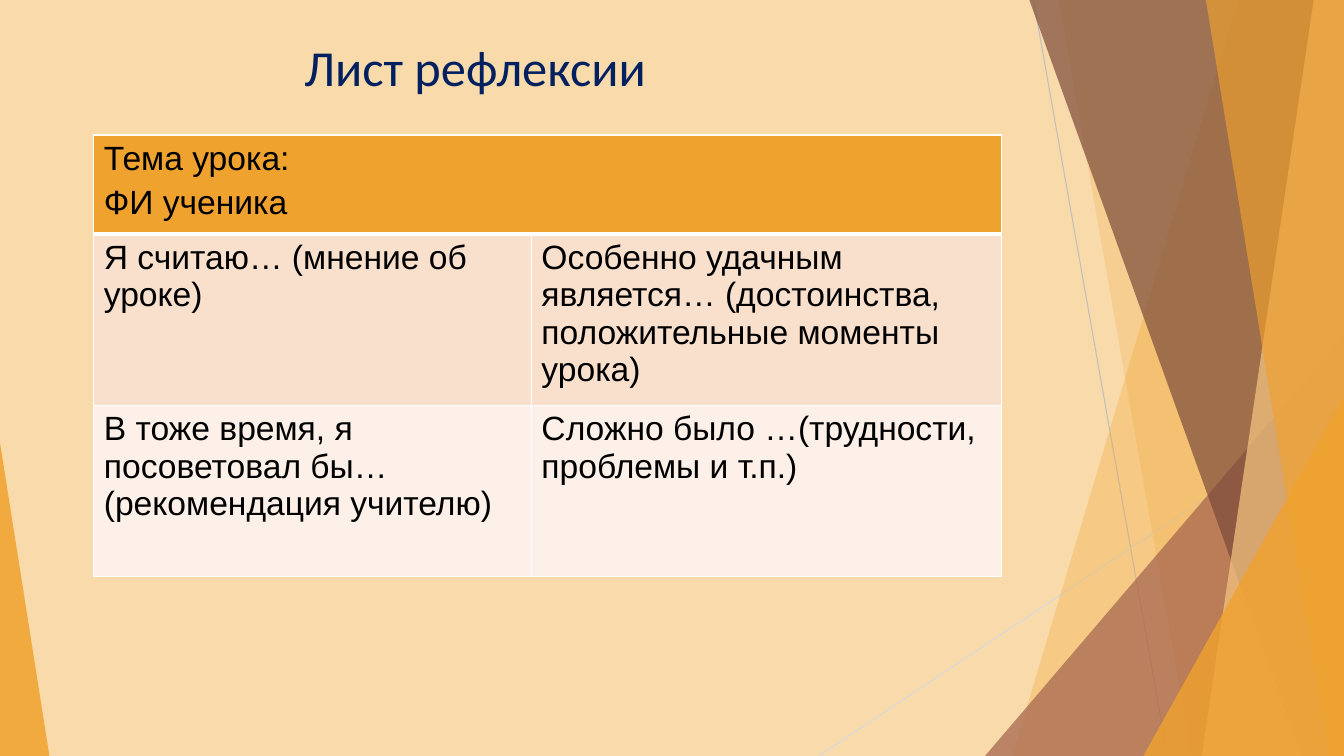
from dataclasses import dataclass

from lxml import etree
from pptx import Presentation
from pptx.dml.color import RGBColor
from pptx.enum.shapes import MSO_CONNECTOR, MSO_SHAPE
from pptx.oxml.ns import qn
from pptx.util import Inches, Pt

STRAIGHT = MSO_CONNECTOR.STRAIGHT
TRIANGLE = MSO_SHAPE.ISOSCELES_TRIANGLE
WIDTH, HEIGHT = Inches(13.33), Inches(7.5)
ORANGE, BROWN, WHITE = "F0A22E", "A5644E", "FFFFFF"


# All positions and sizes are percentages of the slide's width and height
@dataclass
class Ray:
    start: tuple[float, float]
    end: tuple[float, float]
    color: str


@dataclass
class Band:
    """A full-height area from a slanted left edge to the right of the slide."""
    top_x: float
    bottom_x: float
    color: str
    opacity: int


@dataclass
class Corner:
    """A triangle standing on the bottom edge, with its apex at one side."""
    left: float
    top: float
    width: float
    apex: float
    color: str
    opacity: int


@dataclass
class Row:
    height: float
    fill: str
    cells: list[list[str]]
    bottom_border: float = 1


RAYS = [
    Ray((76.9, 0), (86.87, 100), "BFBFBF"),
    Ray((100, 53.73), (60.92, 100), "D9D9D9"),
]
FACETS = [
    Band(92.12, 75.32, ORANGE, 30),
    Band(78.77, 88.67, ORANGE, 20),
    Corner(73.29, 44.4, 26.71, 1, BROWN, 72),
    Band(76.59, 96.85, "7C4B3B", 70),
    Band(97.75, 89.42, "F6C782", 70),
    Band(89.72, 98.87, ORANGE, 65),
    Corner(85.07, 52.4, 14.93, 1, ORANGE, 80),
    Corner(0, 58.53, 3.68, 0, ORANGE, 85),
]
COLUMNS = [32.56, 34.96]
ROWS = [
    Row(13.07, ORANGE, [["Тема урока:", "ФИ ученика"]], bottom_border=3),
    Row(22.67, "F9E0CD", [
        ["Я считаю… (мнение об уроке)"],
        ["Особенно удачным является… (достоинства, положительные моменты урока)"],
    ]),
    Row(22.67, "FCF0E8", [
        ["В тоже время, я посоветовал бы…(рекомендация учителю)"],
        ["Сложно было …(трудности, проблемы и т.п.)"],
    ]),
]


def across(share: float) -> int:
    return round(WIDTH * share / 100)


def down(share: float) -> int:
    return round(HEIGHT * share / 100)


def paint(fill, color: str) -> None:
    fill.solid()
    fill.fore_color.rgb = RGBColor.from_string(color)


def style_text(paragraph, font_name: str, size: float, color: str) -> None:
    for run in paragraph.runs:
        run.font.name = font_name
        run.font.size = Pt(size)
        run.font.bold = False
        run.font.color.rgb = RGBColor.from_string(color)


def draw_ray(slide, ray: Ray) -> None:
    connector = slide.shapes.add_connector(
        STRAIGHT, across(ray.start[0]), down(ray.start[1]),
        across(ray.end[0]), down(ray.end[1]))
    paint(connector.line.fill, ray.color)
    connector.line.width = Pt(0.75)
    properties = connector._element.spPr
    etree.SubElement(properties, qn("a:effectLst"))


def draw_facet(slide, facet: Band | Corner) -> None:
    if isinstance(facet, Band):
        builder = slide.shapes.build_freeform(across(facet.top_x), 0)
        builder.add_line_segments([
            (WIDTH, 0), (WIDTH, HEIGHT), (across(facet.bottom_x), HEIGHT)])
        shape = builder.convert_to_shape()
    else:
        shape = slide.shapes.add_shape(
            TRIANGLE, across(facet.left), down(facet.top),
            across(facet.width), down(100 - facet.top))
        shape.adjustments[0] = facet.apex
    shape.shadow.inherit = False
    shape.line.fill.background()
    paint(shape.fill, facet.color)
    color = shape._element.spPr.find(qn("a:solidFill"))[0]
    etree.SubElement(color, qn("a:alpha"), val=str(facet.opacity * 1000))


def draw_title(slide, text: str) -> None:
    box = slide.shapes.add_textbox(
        across(21.91), down(4.13), across(35.56), down(19.2))
    box.text_frame.word_wrap = True
    box.text_frame.text = text
    style_text(box.text_frame.paragraphs[0], "Calibri", 36, "002060")


def set_borders(cell, bottom_width: float) -> None:
    properties = cell._tc.get_or_add_tcPr()
    widths = {"lnL": 1, "lnR": 1, "lnT": 1, "lnB": bottom_width}
    # Borders come before the fill in the cell properties
    for position, (side, width) in enumerate(widths.items()):
        border = etree.Element(qn(f"a:{side}"), w=str(Pt(width)))
        fill = etree.SubElement(border, qn("a:solidFill"))
        etree.SubElement(fill, qn("a:srgbClr"), val=WHITE)
        properties.insert(position, border)


def fill_cell(cell, lines: list[str]) -> None:
    cell.text_frame.text = "\n".join(lines)
    for paragraph in cell.text_frame.paragraphs:
        paragraph.space_before = Pt(4.8)
        style_text(paragraph, "Arial", 24, "000000")


def draw_table(slide) -> None:
    frame = slide.shapes.add_table(
        len(ROWS), len(COLUMNS), across(6.98), down(17.87),
        across(sum(COLUMNS)), down(sum(row.height for row in ROWS)))
    table = frame.table
    table.first_row = False
    table.horz_banding = False
    for column, width in zip(table.columns, COLUMNS):
        column.width = across(width)
    for row_index, row in enumerate(ROWS):
        table.rows[row_index].height = down(row.height)
        for cell in table.rows[row_index].cells:
            paint(cell.fill, row.fill)
            set_borders(cell, row.bottom_border)
        for column_index, lines in enumerate(row.cells):
            fill_cell(table.cell(row_index, column_index), lines)
    # The header runs over both columns
    table.cell(0, 0).merge(table.cell(0, 1))


def main() -> None:
    presentation = Presentation()
    presentation.slide_width, presentation.slide_height = WIDTH, HEIGHT
    slide = presentation.slides.add_slide(presentation.slide_layouts[6])
    paint(slide.background.fill, "F9DAAB")
    # Faceted decoration
    for ray in RAYS:
        draw_ray(slide, ray)
    for facet in FACETS:
        draw_facet(slide, facet)
    # Content
    draw_title(slide, "Лист рефлексии")
    draw_table(slide)
    presentation.save("out.pptx")


if __name__ == "__main__":
    main()
